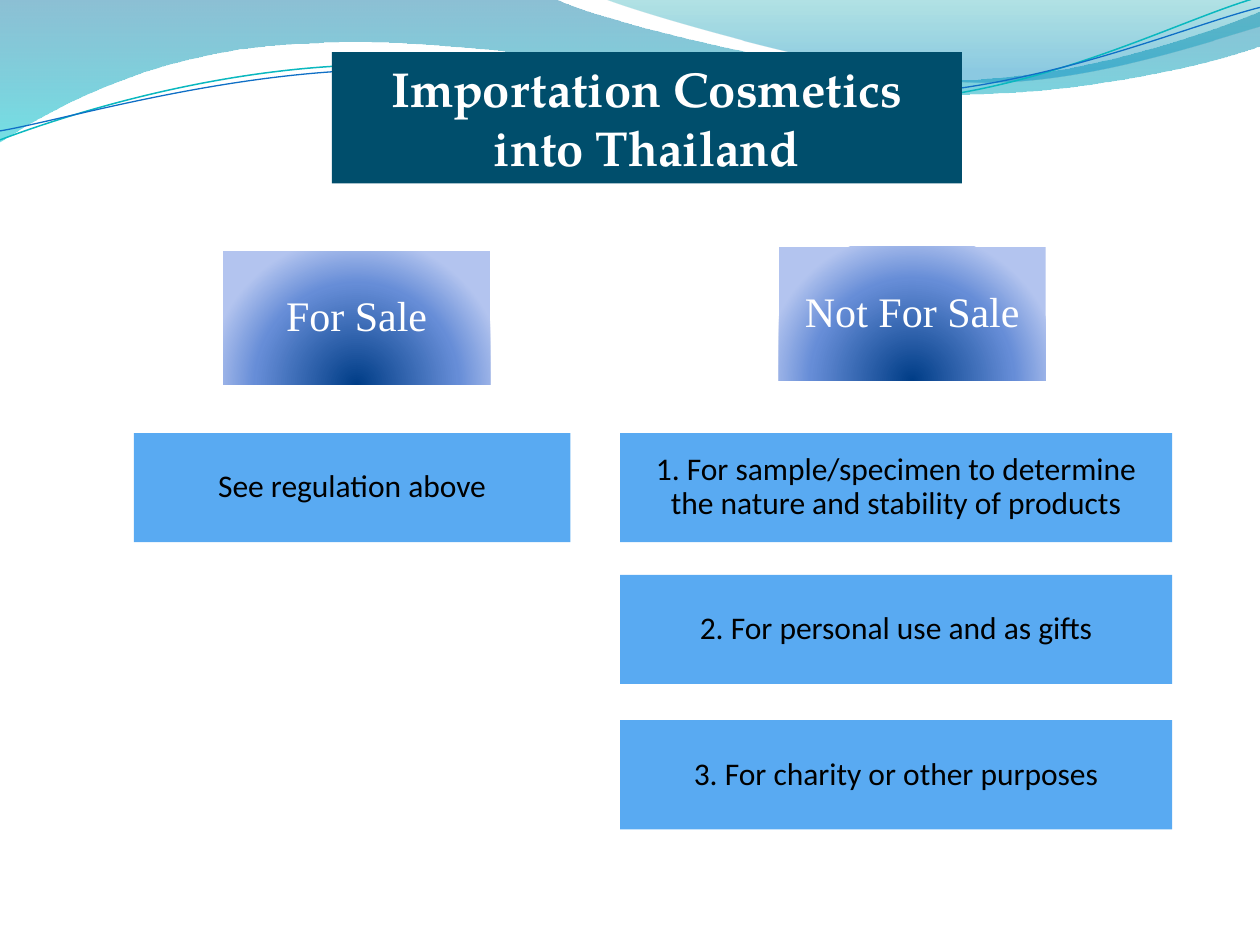
import math

import lxml.etree
import pptx
import pptx.dml.color
import pptx.enum.shapes
import pptx.enum.text
import pptx.oxml
import pptx.oxml.ns
import pptx.util

Cm = pptx.util.Cm
Pt = pptx.util.Pt
RGB = pptx.dml.color.RGBColor
qn = pptx.oxml.ns.qn

WHITE = RGB(0xFF, 0xFF, 0xFF)
BLACK = RGB(0x00, 0x00, 0x00)
NAVY = RGB(0x00, 0x4E, 0x6C)
SKY = RGB(0x59, 0xAA, 0xF2)
TEAL = RGB(0x0A, 0xB8, 0xBF)
BLUE = RGB(0x0F, 0x6F, 0xC6)

# Gradient stops: position, colour, opacity (all in percent)
LEFT = [(0, RGB(0x00, 0x74, 0xA1), 45), (100, RGB(0x00, 0xC6, 0xCF), 55)]
RIGHT = [(0, RGB(0x00, 0xA1, 0xA9), 30), (80, RGB(0x00, 0x8B, 0xBF), 45)]
GLOW = [(0, RGB(0x00, 0x3D, 0x87), 100), (68, RGB(0x66, 0x8D, 0xD7), 100),
        (100, RGB(0xB3, 0xC4, 0xEF), 100)]
DOWN = '<a:lin ang="5400000" scaled="0"/>'
ROUND = ('<a:path path="circle"><a:fillToRect l="50000" t="130000" '
         'r="50000" b="-30000"/></a:path>')

# Text styles: font values, inset in cm, line spacing
TITLE = {"font": {"name": "TeX Gyre Pagella", "size": Pt(28), "bold": True},
         "color": WHITE, "inset": (0.25, 0.13), "space": 1.0}
HEAD = {"font": {"name": "Times New Roman", "size": Pt(24)},
        "color": WHITE, "inset": (0.04, 0.04), "space": 0.9}
ITEM = {"font": {"name": "Calibri", "size": Pt(18)},
        "color": BLACK, "inset": (0.36, 0.36), "space": 0.9}
TILT = -2.7


def turn(pts, mid, angle):
    """Rotate points clockwise about a middle."""
    c, s = math.cos(math.radians(angle)), math.sin(math.radians(angle))
    return [(mid[0] + (x - mid[0]) * c - (y - mid[1]) * s,
             mid[1] + (x - mid[0]) * s + (y - mid[1]) * c) for x, y in pts]


class Deck:
    def __init__(self):
        self.prs = pptx.Presentation()
        self.prs.slide_width = Cm(25.4)
        self.prs.slide_height = Cm(19.05)
        self.slide = self.prs.slides.add_slide(self.prs.slide_layouts[6])

    def blend(self, shape, stops, shade):
        """Fill a shape with a gradient."""
        shape.fill.background()
        gs = "".join(
            f'<a:gs pos="{pos * 1000}"><a:srgbClr val="{rgb}">'
            f'<a:alpha val="{alpha * 1000}"/></a:srgbClr></a:gs>'
            for pos, rgb, alpha in stops)
        fill = pptx.oxml.parse_xml(
            f'<a:gradFill {pptx.oxml.ns.nsdecls("a")} rotWithShape="1">'
            f'<a:gsLst>{gs}</a:gsLst>{shade}</a:gradFill>')
        props = shape._element.spPr
        props.replace(props.find(qn("a:noFill")), fill)

    def curve(self, start, parts, close, mid=(0, 0), tilt=0):
        """Outline in cm: a part of two values is a line, of six a curve."""
        flat = [start] + [part[i:i + 2] for part in parts
                          for i in range(0, len(part), 2)]
        pts = [(Cm(x), Cm(y)) for x, y in turn(flat, mid, -tilt)]
        pen = self.slide.shapes.build_freeform(*pts[0], scale=1.0)
        pen.add_line_segments(pts[1:], close=close)
        shape = pen.convert_to_shape()
        shape.shadow.inherit = False
        shape.rotation = tilt
        # Join each three segments of a curve into one Bezier segment
        segs = iter(list(shape._element.iter(qn("a:lnTo"))))
        for part in parts:
            group = [next(segs) for _ in range(len(part) // 2)]
            if len(group) == 3:
                bend = lxml.etree.Element(qn("a:cubicBezTo"))
                group[0].addprevious(bend)
                for seg in group:
                    bend.append(seg[0])
                    seg.getparent().remove(seg)
        return shape

    def wave(self, start, parts, stops):
        shape = self.curve(start, parts, True)
        shape.line.fill.background()
        self.blend(shape, stops, DOWN)

    def thread(self, start, parts, mid, color, width):
        shape = self.curve(start, parts, False, mid, TILT)
        shape.fill.background()
        shape.line.color.rgb = color
        shape.line.width = Pt(width)

    def box(self, text, area, style, color=None):
        """Text panel: plain with a colour, glowing without one."""
        shape = self.slide.shapes.add_shape(
            pptx.enum.shapes.MSO_SHAPE.RECTANGLE, *map(Cm, area))
        shape.shadow.inherit = False
        shape.line.fill.background()
        if color is None:
            self.blend(shape, GLOW, ROUND)
        else:
            shape.fill.solid()
            shape.fill.fore_color.rgb = color
        frame = shape.text_frame
        side, edge = map(Cm, style["inset"])
        form = {"word_wrap": True, "margin_left": side, "margin_right": side,
                "margin_top": edge, "margin_bottom": edge,
                "vertical_anchor": pptx.enum.text.MSO_ANCHOR.MIDDLE}
        for key, val in form.items():
            setattr(frame, key, val)
        para = frame.paragraphs[0]
        para.alignment = pptx.enum.text.PP_ALIGN.CENTER
        para.line_spacing = style["space"]
        run = para.add_run()
        run.text = text
        for key, val in style["font"].items():
            setattr(run.font, key, val)
        run.font.color.rgb = style["color"]


def main():
    deck = Deck()

    # Waves along the top
    deck.wave((0, 0), [
        (11.18, -0.03),
        (12.09, 0.43, 16.87, 1.6, 19.25, 1.6),
        (21.67, 1.6, 24.33, 0.66, 25.4, 0.23),
        (25.43, 0.91),
        (24.97, 1.12, 22.1, 1.93, 18.95, 1.9),
        (15.8, 1.9, 9.7, 0.71, 6.53, 0.86),
        (3.28, 0.91, 1.17, 2.11, -0.03, 2.87)], LEFT)
    deck.wave((12.17, -0.03), [
        (12.93, 0.28, 17.32, 1.57, 19.53, 1.65),
        (21.74, 1.75, 24.41, 0.81, 25.4, 0.53),
        (25.4, 0)], RIGHT)

    # Thin tilted lines that follow the waves
    deck.thread((0, 2.82), [
        (1.22, 2.36, 4.01, 1.45, 7.04, 1.32),
        (10.03, 1.19, 15.06, 2.26, 18.11, 2.03),
        (21.16, 1.8, 23.83, 0.38, 25.35, -0.05)], (12.67, 1.46), TEAL, 0.85)
    deck.thread((0, 2.64), [
        (1.19, 2.44, 4.17, 1.55, 7.19, 1.42),
        (10.24, 1.3, 15.16, 2.13, 18.21, 1.9),
        (21.23, 1.7, 23.9, 0.53, 25.4, 0.15)], (12.69, 1.5), BLUE, 0.75)

    # Title
    deck.box("Importation Cosmetics into Thailand",
             (6.69, 1.05, 12.7, 2.65), TITLE, NAVY)

    # Column heads
    for text, left, top in (("For Sale", 4.5, 5.07),
                            ("Not For Sale", 15.7, 4.98)):
        deck.box(text, (left, top, 5.38, 2.69), HEAD)

    # Items under each head
    for text, left, top, width in (
            ("1. For sample/specimen to determine the nature and stability "
             "of products", 12.5, 8.73, 11.13),
            ("2. For personal use and as gifts", 12.5, 11.59, 11.13),
            ("3. For charity or other purposes", 12.5, 14.52, 11.13),
            ("See regulation above", 2.7, 8.73, 8.8)):
        deck.box(text, (left, top, width, 2.2), ITEM, SKY)

    deck.prs.save("out.pptx")


if __name__ == "__main__":
    main()
